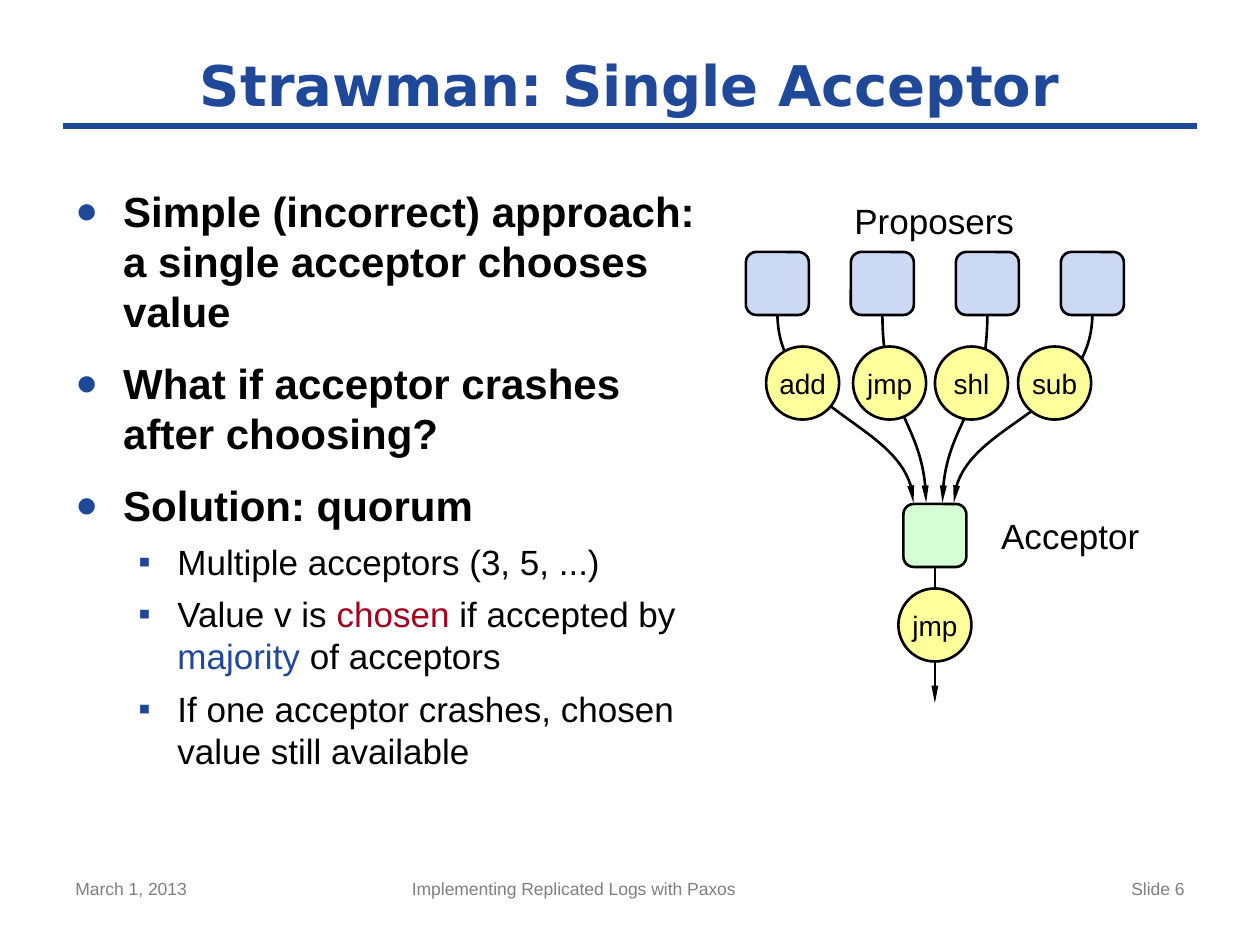
import pptx
import pptx.dml.color
import pptx.enum.shapes
import pptx.enum.text
import pptx.oxml
import pptx.oxml.ns
import pptx.util
from lxml import etree

Inches, Pt = pptx.util.Inches, pptx.util.Pt
RGB = pptx.dml.color.RGBColor
SHAPE = pptx.enum.shapes.MSO_SHAPE
STRAIGHT = pptx.enum.shapes.MSO_CONNECTOR.STRAIGHT
ALIGN = pptx.enum.text.PP_ALIGN
ANCHOR = pptx.enum.text.MSO_ANCHOR
qn = pptx.oxml.ns.qn

BLACK = RGB(0x00, 0x00, 0x00)
BLUE = RGB(0x1F, 0x48, 0x99)
RED = RGB(0xA5, 0x00, 0x1E)
GRAY = RGB(0x7F, 0x7F, 0x7F)
PROPOSER_FILL = RGB(0xCC, 0xD9, 0xF4)
ACCEPTOR_FILL = RGB(0xD5, 0xFF, 0xD5)
VALUE_FILL = RGB(0xFF, 0xFF, 0x9B)

BOX = 0.5
CIRCLE = 0.58
BOTTOM = 2
ACCEPTOR_X, ACCEPTOR_Y = 7.17, 4
PROPOSER_XS = [5.92 + i * 2.5 / 3 for i in range(4)]
PROPOSER_Y = 2
ARROW_END_XS = [7.25, 7.35, 7.48, 7.57]
VALUES = [("add", 6.08), ("jmp", 6.77), ("shl", 7.42), ("sub", 8.08)]

BULLETS = [
    (0, [("Simple (incorrect) approach: a single acceptor chooses value", BLACK)]),
    (0, [("What if acceptor crashes after choosing?", BLACK)]),
    (0, [("Solution: quorum", BLACK)]),
    (1, [("Multiple acceptors (3, 5, ...)", BLACK)]),
    (1, [("Value v is ", BLACK), ("chosen", RED), (" if accepted by ", BLACK),
         ("majority", BLUE), (" of acceptors", BLACK)]),
    (1, [("If one acceptor crashes, chosen value still available", BLACK)]),
]
LEVELS = [
    {"size": 24, "bold": True, "before": 12, "left": 0.38, "hang": 0.38,
     "char": "●", "percent": 90},
    {"size": 20, "bold": False, "before": 6, "left": 0.81, "hang": 0.31,
     "char": "▪", "percent": 100},
]
FOOTERS = [
    ("March 1, 2013", 0.5, 2.33, ALIGN.LEFT),
    ("Implementing Replicated Logs with Paxos", 3.17, 3.75, ALIGN.LEFT),
    ("Slide 6", 7.17, 2.33, ALIGN.RIGHT),
]


def add_run(p, text, size, color, bold=False, font="Arial"):
    r = p.add_run()
    r.text = text
    for name, value in {"size": Pt(size), "bold": bold, "name": font}.items():
        setattr(r.font, name, value)
    r.font.color.rgb = color


def clear_margins(tf):
    for side in ("left", "top", "right", "bottom"):
        setattr(tf, f"margin_{side}", 0)


def add_text(s, text, box, size, color, align=ALIGN.LEFT, anchor=ANCHOR.TOP,
             margins=True, **font):
    tf = s.shapes.add_textbox(*map(Inches, box)).text_frame
    tf.word_wrap = True
    tf.vertical_anchor = anchor
    if not margins:
        clear_margins(tf)
    p = tf.paragraphs[0]
    p.alignment = align
    add_run(p, text, size, color, **font)


def set_bullet(p, level):
    pPr = p._p.get_or_add_pPr()
    pPr.set("marL", str(Inches(level["left"])))
    pPr.set("indent", str(-Inches(level["hang"])))
    color = etree.SubElement(pPr, qn("a:buClr"))
    etree.SubElement(color, qn("a:srgbClr"), val=str(BLUE))
    etree.SubElement(pPr, qn("a:buSzPct"), val=str(level["percent"] * 1000))
    etree.SubElement(pPr, qn("a:buFont"), typeface="Arial")
    etree.SubElement(pPr, qn("a:buChar"), char=level["char"])


def add_bullets(s):
    tf = s.shapes.add_textbox(*map(Inches, (0.5, 1.42, 5.17, 5.25))).text_frame
    tf.word_wrap = True
    for i, (depth, runs) in enumerate(BULLETS):
        level = LEVELS[depth]
        p = tf.add_paragraph() if i else tf.paragraphs[0]
        p.level = depth
        p.space_before = Pt(level["before"])
        set_bullet(p, level)
        for text, color in runs:
            add_run(p, text, level["size"], color, level["bold"])


def set_line(sp, color=BLACK, width=1.5, arrow=False):
    sp.line.color.rgb = color
    sp.line.width = Pt(width)
    if arrow:
        etree.SubElement(sp.line._get_or_add_ln(), qn("a:tailEnd"),
                         type="triangle", w="sm", len="lg")


def add_node(s, kind, x, y, size, fill):
    sp = s.shapes.add_shape(kind, *map(Inches, (x, y, size, size)))
    sp.shadow.inherit = False
    sp.fill.solid()
    sp.fill.fore_color.rgb = fill
    set_line(sp)
    return sp


def add_value(s, text, x, y):
    tf = add_node(s, SHAPE.OVAL, x, y, CIRCLE, VALUE_FILL).text_frame
    clear_margins(tf)
    tf.word_wrap = False
    tf.vertical_anchor = ANCHOR.MIDDLE
    p = tf.paragraphs[0]
    p.alignment = ALIGN.CENTER
    add_run(p, text, 16, BLACK)


def add_straight(s, x1, y1, x2, y2, **line):
    sp = s.shapes.add_connector(STRAIGHT, *map(Inches, (x1, y1, x2, y2)))
    set_line(sp, **line)
    etree.SubElement(sp._element.spPr, qn("a:effectLst"))
    return sp


def add_curve(s, x1, y1, x2, y2):
    """Draw an arrow that leaves and arrives almost vertically."""
    builder = s.shapes.build_freeform(Inches(x1), Inches(y1))
    builder.add_line_segments([(Inches(x2), Inches(y2))], close=False)
    sp = builder.convert_to_shape()
    sp.shadow.inherit = False
    sp.fill.background()
    set_line(sp, arrow=True)
    segment = next(sp._element.iter(qn("a:lnTo")))
    segment.tag = qn("a:cubicBezTo")
    start_x = 0 if x1 < x2 else sp.width
    dx = sp.width if x1 < x2 else -sp.width
    for i, (across, down) in enumerate([(0.01, 0.5), (0.98, 0.58)]):
        pt = etree.Element(qn("a:pt"), x=str(int(start_x + across * dx)),
                           y=str(int(down * sp.height)))
        segment.insert(i, pt)


def add_diagram(s):
    for x in PROPOSER_XS:
        add_node(s, SHAPE.ROUNDED_RECTANGLE, x, PROPOSER_Y, BOX, PROPOSER_FILL)
    acceptor = add_node(s, SHAPE.ROUNDED_RECTANGLE, ACCEPTOR_X, ACCEPTOR_Y, BOX,
                        ACCEPTOR_FILL)
    for text, x, y in [("Proposers", 6.75, 1.58), ("Acceptor", 7.83, 4.08)]:
        add_text(s, text, (x, y, 1.33, 0.34), 20, BLACK, ALIGN.CENTER, margins=False)
    for x, end_x in zip(PROPOSER_XS, ARROW_END_XS):
        add_curve(s, x + BOX / 2, PROPOSER_Y + BOX, end_x, ACCEPTOR_Y - 0.01)
    middle = ACCEPTOR_X + BOX / 2
    output = add_straight(s, middle, ACCEPTOR_Y + BOX, middle, 5.58, arrow=True)
    output.begin_connect(acceptor, BOTTOM)
    for text, x in VALUES:
        add_value(s, text, x, 2.75)
    add_value(s, "jmp", middle - CIRCLE / 2, 4.67)


def main():
    prs = pptx.Presentation()
    prs.slide_width, prs.slide_height = Inches(10), Inches(7.5)
    s = prs.slides.add_slide(prs.slide_layouts[6])
    add_straight(s, 0.5, 1, 9.5, 1, color=BLUE, width=4)
    add_bullets(s)
    for text, x, width, align in FOOTERS:
        add_text(s, text, (x, 6.92, width, 0.43), 10, GRAY, align)
    add_text(s, "Strawman: Single Acceptor", (0.5, 0.33, 9, 0.67), 32, BLUE,
             ALIGN.CENTER, ANCHOR.MIDDLE, bold=True, font="DejaVu Sans")
    add_diagram(s)
    prs.save("out.pptx")


if __name__ == "__main__":
    main()
